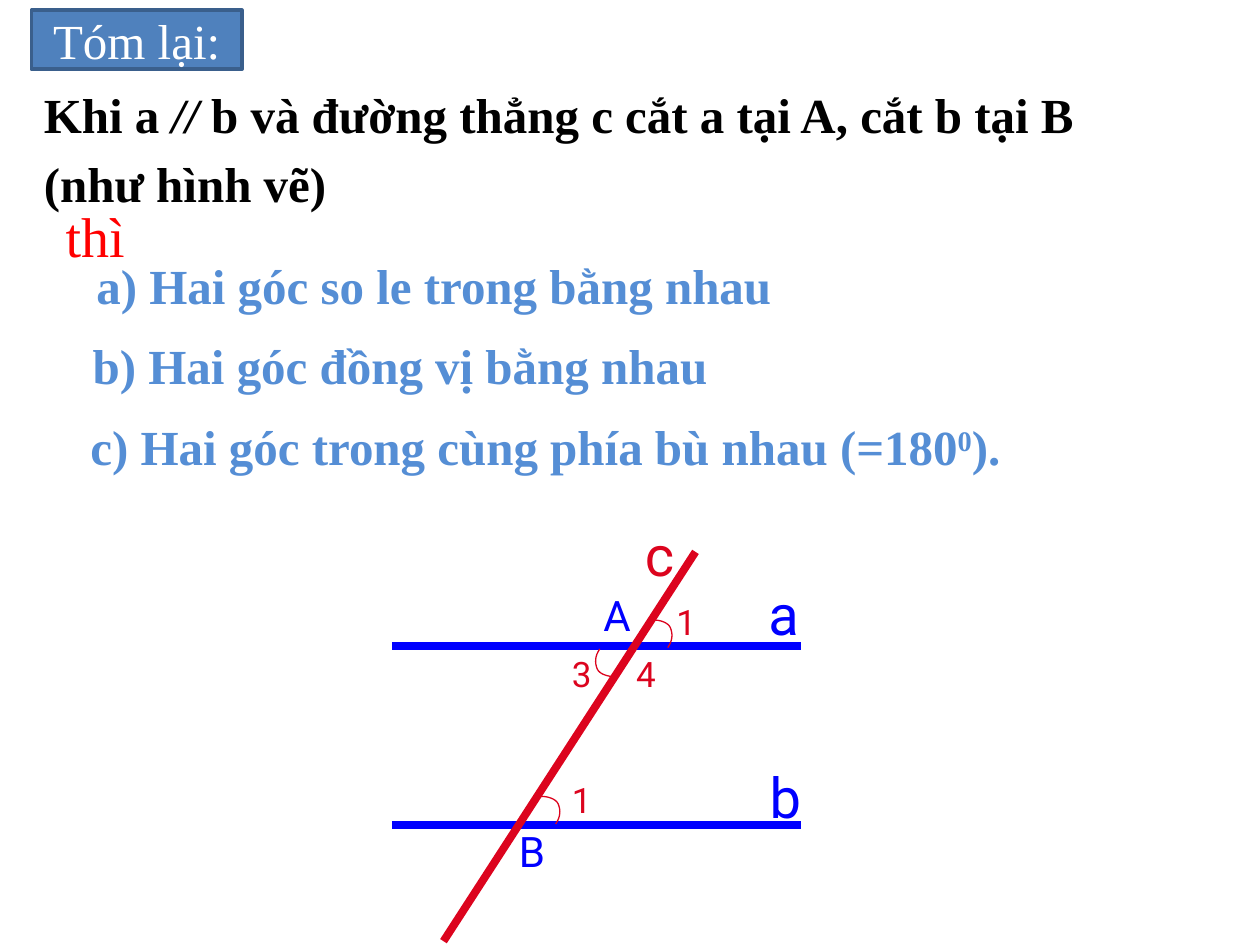
from lxml import etree
from pptx import Presentation
from pptx.dml.color import RGBColor
from pptx.enum.shapes import MSO_CONNECTOR
from pptx.enum.text import MSO_ANCHOR, PP_ALIGN
from pptx.oxml.ns import qn
from pptx.util import Inches, Pt

STRAIGHT = MSO_CONNECTOR.STRAIGHT
TOP, MIDDLE = MSO_ANCHOR.TOP, MSO_ANCHOR.MIDDLE
LEFT, CENTER = PP_ALIGN.LEFT, PP_ALIGN.CENTER
TITLE_ONLY = 5
SERIF, SANS = "Times New Roman", "Roboto"
BLUE, RED, SKY = "0000FF", "DC041E", "558ED5"
ARC_CURVES = [
    [(0, 0), (0.06, 0), (0.12, 0.02), (0.14, 0.06)],
    [(0.14, 0.06), (0.16, 0.11), (0.16, 0.16), (0.12, 0.22)],
]
STEPS = 8


def color(value):
    return RGBColor.from_string(value)


def format_font(font, fill, **values):
    font.color.rgb = color(fill)
    for name, value in values.items():
        setattr(font, name, value)


def format_line(line, stroke, width):
    line.color.rgb = color(stroke)
    line.width = Pt(width)


def format_frame(frame, anchor):
    values = {
        "word_wrap": True,
        "vertical_anchor": anchor,
        "margin_left": Inches(0.1),
        "margin_right": Inches(0.1),
        "margin_top": Inches(0.05),
        "margin_bottom": Inches(0.05),
    }
    for name, value in values.items():
        setattr(frame, name, value)


def add_text(page, box, lines, fill, anchor=TOP, align=LEFT, **font):
    frame = page.shapes.add_textbox(*map(Inches, box)).text_frame
    format_frame(frame, anchor)
    for index, spans in enumerate(lines):
        para = frame.add_paragraph() if index else frame.paragraphs[0]
        para.alignment = align
        for text, extra in spans:
            span = para.add_run()
            span.text = text
            format_font(span.font, fill, **{**font, **extra})
    return frame


def place_title(page, box):
    title = page.shapes.title
    title.left, title.top, title.width, title.height = map(Inches, box)
    title.fill.solid()
    title.fill.fore_color.rgb = color("4F81BD")
    format_line(title.line, "3A5F8C", 2)
    title.text_frame.text = "Tóm lại:"
    format_frame(title.text_frame, MIDDLE)
    para = title.text_frame.paragraphs[0]
    para.alignment = CENTER
    format_font(para.runs[0].font, "FFFFFF", name=SERIF, size=Pt(28))


def add_premise(page, box):
    lines = [
        [("Khi a", {}), (" // ", {"italic": True}),
         ("b và đường thẳng c cắt a tại A, cắt b tại B", {})],
        [("(như hình vẽ)", {})],
    ]
    frame = add_text(page, box, lines, "000000", name=SERIF, size=Pt(28), bold=True)
    for index, para in enumerate(frame.paragraphs):
        para.line_spacing = 0.7
        para.space_before = Pt(16 if index else 0)
        properties = para._p.get_or_add_pPr()
        properties.set("marL", str(Inches(0.38)))
        properties.set("indent", str(-Inches(0.38)))


def add_conclusions(page, box):
    left, top, width, height = box
    add_text(page, (left, top, 1.17, 0.73), [[("thì", {})]], "FF0000",
             MIDDLE, CENTER, name=SERIF, size=Pt(32))
    items = [
        (0.4, 0.48, [(" a) Hai góc so le trong bằng nhau", {})]),
        (0.37, 1.11, [(" b) Hai góc đồng vị bằng nhau", {})]),
        (0.45, 1.76, [("c) Hai góc trong cùng phía bù nhau (=180", {}),
                      ("0", {"raised": True}), (").", {})]),
    ]
    for x, y, spans in items:
        plain = [(text, {}) for text, _ in spans]
        frame = add_text(page, (left + x, top + y, width - x, 0.57), [plain], SKY,
                         name=SERIF, size=Pt(28), bold=True)
        for span, (_, extra) in zip(frame.paragraphs[0].runs, spans):
            if extra.get("raised"):
                span.font._element.set("baseline", "30000")


def add_line(page, start, end, stroke):
    line = page.shapes.add_connector(STRAIGHT, *map(Inches, start + end))
    format_line(line.line, stroke, 4.5)
    etree.SubElement(line._element.spPr, qn("a:effectLst"))


def curve_point(curve, t):
    weights = ((1 - t) ** 3, 3 * t * (1 - t) ** 2, 3 * t ** 2 * (1 - t), t ** 3)
    return [sum(w * point[axis] for w, point in zip(weights, curve)) for axis in (0, 1)]


def add_arc(page, x, y, direction):
    points = []
    for curve in ARC_CURVES:
        for step in range(1, STEPS + 1):
            dx, dy = curve_point(curve, step / STEPS)
            points.append((Inches(x + direction * dx), Inches(y + direction * dy)))
    builder = page.shapes.build_freeform(Inches(x), Inches(y))
    builder.add_line_segments(points, close=False)
    arc = builder.convert_to_shape()
    arc.shadow.inherit = False
    arc.fill.background()
    format_line(arc.line, RED, 0.75)


def add_diagram(page, box):
    left, top, width, height = box
    for y in (1.05, 2.47):
        add_line(page, (left, top + y), (left + 3.25, top + y), BLUE)
    add_line(page, (left + 2.41, top + 0.3), (left + 0.41, top + height), RED)
    labels = [
        ("b", 2.9, 1.92, 32, BLUE), ("a", 2.89, 0.47, 32, BLUE),
        ("c", 1.91, 0, 32, RED),
        ("B", 0.91, 2.42, 24, BLUE), ("A", 1.58, 0.55, 24, BLUE),
        ("4", 1.84, 1.05, 20, RED), ("1", 2.16, 0.64, 20, RED),
        ("1", 1.33, 2.05, 20, RED), ("3", 1.33, 1.05, 20, RED),
    ]
    for text, x, y, size, fill in labels:
        add_text(page, (left + x, top + y, 0.75, size / 60 + 0.1), [[(text, {})]],
                 fill, name=SANS, size=Pt(size))
    for x, y, direction in [(2.07, 0.84, 1), (1.77, 1.29, -1), (1.18, 2.24, 1)]:
        add_arc(page, left + x, top + y, direction)


def main():
    deck = Presentation()
    deck.slide_width, deck.slide_height = Inches(10), Inches(7.5)
    page = deck.slides.add_slide(deck.slide_layouts[TITLE_ONLY])
    place_title(page, (0.25, 0.08, 1.67, 0.47))
    add_premise(page, (0.25, 0.75, 9.75, 1.01))
    add_diagram(page, (3.11, 4.08, 3.65, 3.39))
    add_conclusions(page, (0.17, 1.5, 9.45, 2.33))
    deck.save("out.pptx")


if __name__ == "__main__":
    main()
